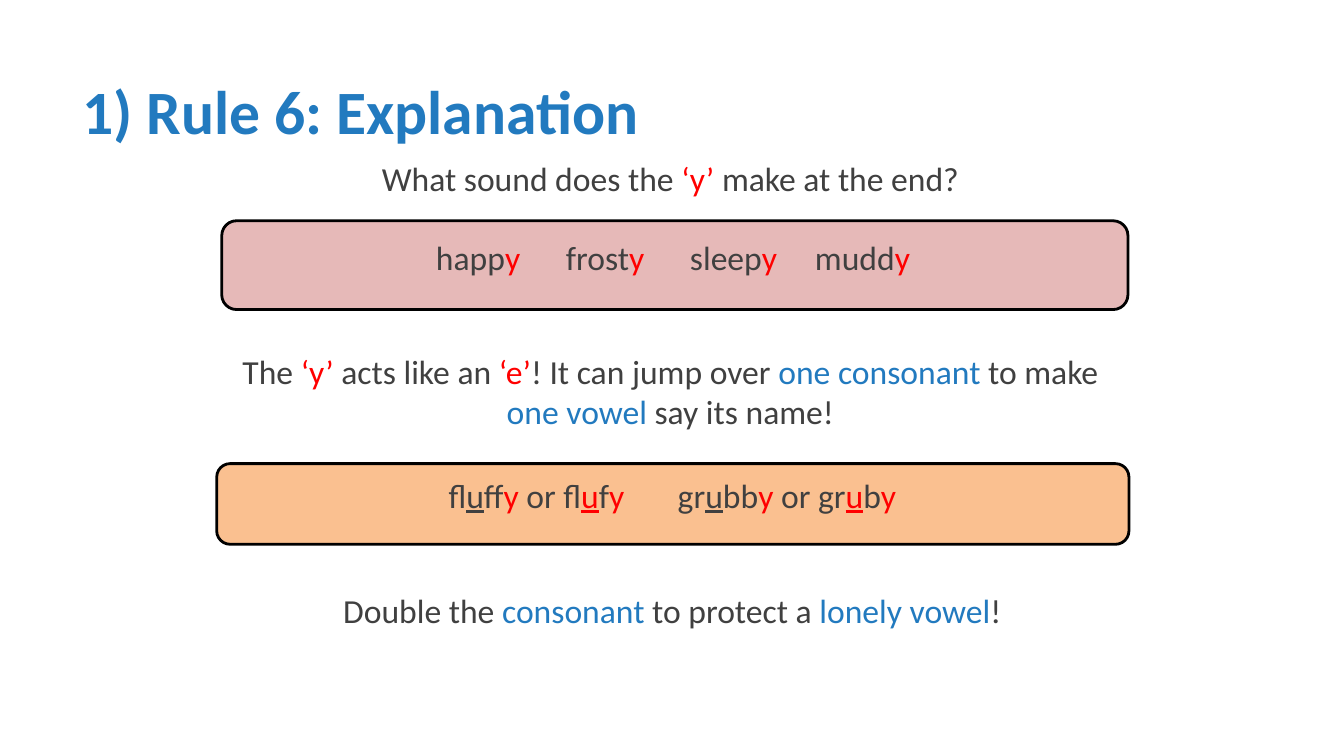
from dataclasses import dataclass

from lxml import etree
from pptx import Presentation
from pptx.dml.color import RGBColor
from pptx.enum.shapes import MSO_SHAPE
from pptx.enum.text import MSO_ANCHOR, PP_ALIGN
from pptx.oxml.ns import qn
from pptx.util import Pt

ROUNDED = MSO_SHAPE.ROUNDED_RECTANGLE
MIDDLE, TOP = MSO_ANCHOR.MIDDLE, MSO_ANCHOR.TOP
LEFT, CENTER = PP_ALIGN.LEFT, PP_ALIGN.CENTER


@dataclass(frozen=True)
class Theme:
    font: str = "Calibri"
    title_size: int = 44
    body_size: int = 24
    text: str = "404040"
    red: str = "FF0000"
    blue: str = "227ABF"
    pink: str = "E6B9B8"
    orange: str = "FAC090"
    outline: str = "000000"


T = Theme()


def rgb(color):
    return RGBColor.from_string(color)


def style(r, size, color, bold=False, underline=False):
    r.font.name = T.font
    r.font.size = Pt(size)
    r.font.bold = bold
    r.font.underline = underline
    r.font.color.rgb = rgb(color)


def add_title(s, box, text):
    sp = s.shapes.title
    sp.left, sp.top, sp.width, sp.height = (Pt(v) for v in box)
    tf = sp.text_frame
    tf.text = text
    tf.vertical_anchor = MIDDLE
    p = tf.paragraphs[0]
    p.alignment = LEFT
    style(p.runs[0], T.title_size, T.blue, bold=True)


def add_text(s, box, lines, align=CENTER, indent=0, tabs=()):
    sp = s.shapes.add_textbox(*(Pt(v) for v in box))
    tf = sp.text_frame
    tf.word_wrap = True
    tf.vertical_anchor = TOP
    tf.margin_left = Pt(7.2 + indent)
    p = tf.paragraphs[0]
    p.alignment = align
    if tabs:
        tab_list = etree.SubElement(p._p.get_or_add_pPr(), qn("a:tabLst"))
        for pos in tabs:
            etree.SubElement(tab_list, qn("a:tab"), pos=str(int(Pt(pos))), algn="l")
    for i, line in enumerate(lines):
        if i:
            p.add_line_break()
        for text, color, *underline in line:
            r = p.add_run()
            r.text = text
            style(r, T.body_size, color, underline=bool(underline))


def add_word_panel(s, box, fill, text_top, words, indent, tabs):
    x, y, w, h = box
    sp = s.shapes.add_shape(ROUNDED, *(Pt(v) for v in box))
    sp.shadow.inherit = False
    sp.fill.solid()
    sp.fill.fore_color.rgb = rgb(fill)
    sp.line.color.rgb = rgb(T.outline)
    sp.line.width = Pt(2)
    add_text(s, (x, y + text_top, w, 67.7), [words], LEFT, indent, tabs)


def vowel_pair(start, doubled, single):
    return [
        (start, T.text), ("u", T.text, True), (doubled, T.text), ("y ", T.red),
        ("or " + start, T.text), ("u", T.red, True), (single, T.text), ("y", T.red),
    ]


def build_rule_slide(prs):
    s = prs.slides.add_slide(prs.slide_layouts[5])
    add_title(s, (51.8, 26.6, 828, 104.4), "1) Rule 6: Explanation")

    add_text(s, (123.1, 109.4, 711.4, 66.2), [[
        ("What sound does the ", T.text), ("‘y’ ", T.red),
        ("make at the end?", T.text),
    ]])

    endings = []
    for i, stem in enumerate(("happ", "frost", "sleep", "mudd")):
        endings += [("\t" * (i > 0) + stem, T.text), ("y", T.red)]
    add_word_panel(s, (158.4, 157.7, 647.3, 63.4), T.pink, 7.9,
                   endings, 145.8, (92.8, 181.4, 270.7))

    add_text(s, (123.1, 247, 711.4, 66.2), [
        [("The ", T.text), ("‘y’", T.red), (" acts like an ", T.text),
         ("‘e’", T.red), ("! It can jump over ", T.text),
         ("one consonant ", T.blue), ("to make", T.text)],
        [("one vowel ", T.blue), ("say its name!", T.text)],
    ])

    pairs = vowel_pair("fl", "ff", "f") + [("\t", T.text)] + vowel_pair("gr", "bb", "b")
    add_word_panel(s, (154.8, 331.2, 651.6, 57.6), T.orange, 4.3,
                   pairs, 158.4, (163.7,))

    add_text(s, (120.2, 417.6, 720, 36), [[
        ("Double the ", T.text), ("consonant", T.blue),
        (" to protect a ", T.text), ("lonely vowel", T.blue), ("!", T.text),
    ]])


def main():
    prs = Presentation()
    prs.slide_width, prs.slide_height = Pt(960), Pt(540)
    build_rule_slide(prs)
    prs.save("out.pptx")


if __name__ == "__main__":
    main()
